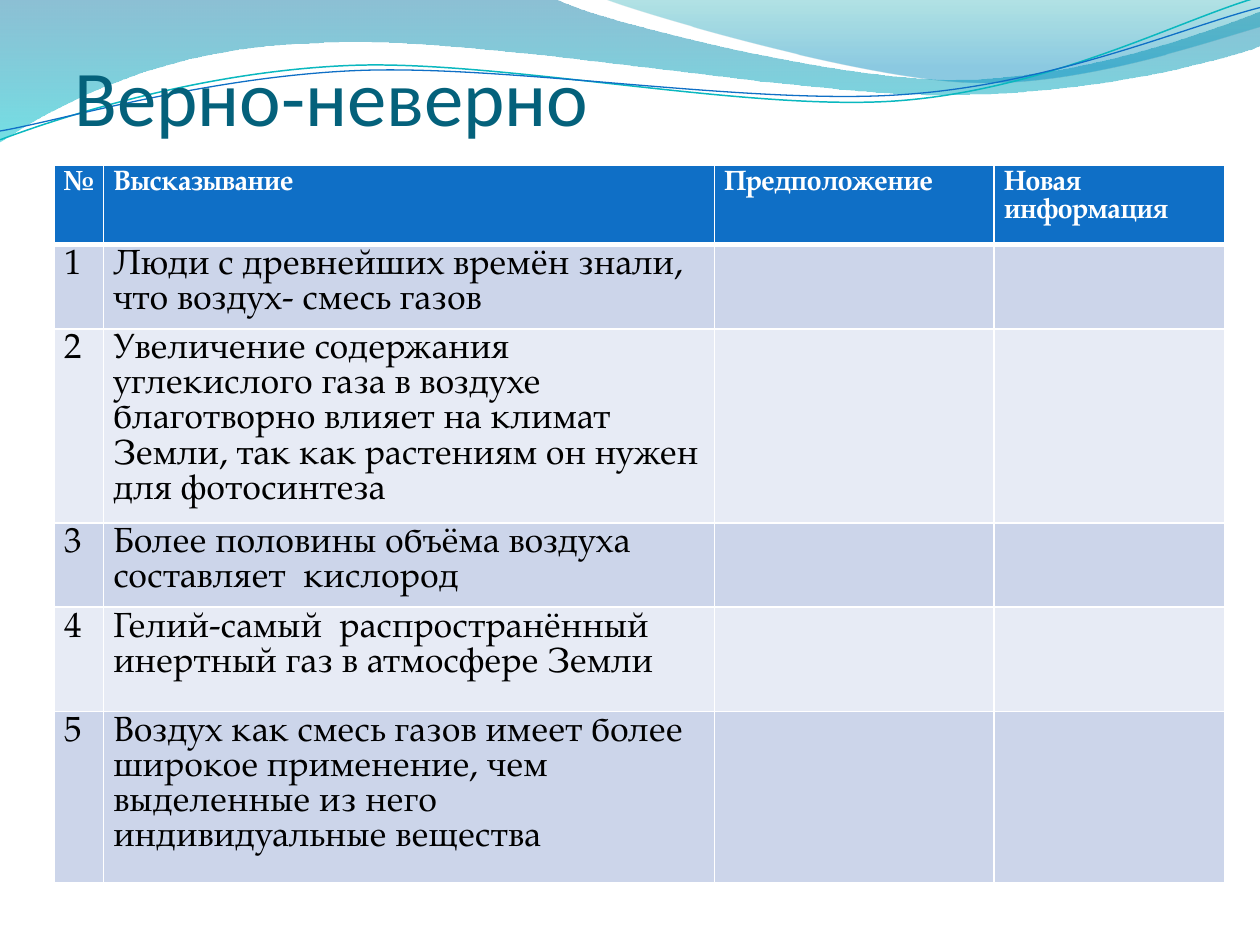
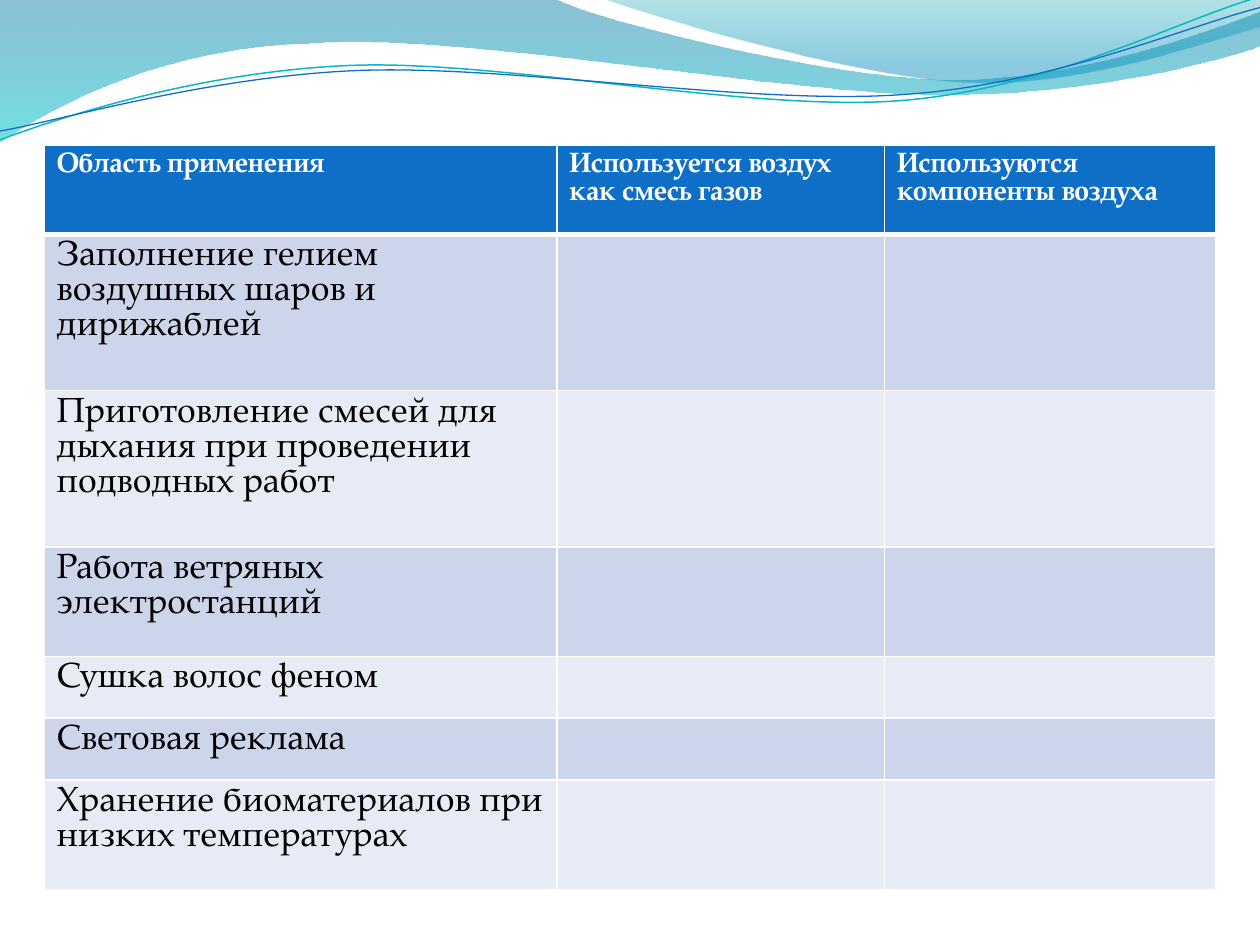
from dataclasses import dataclass
from math import cos, radians, sin

from lxml.etree import SubElement
from pptx import Presentation
from pptx.dml.color import RGBColor
from pptx.enum.text import MSO_ANCHOR, MSO_AUTO_SIZE, PP_ALIGN
from pptx.oxml.ns import qn
from pptx.util import Inches, Pt

# Shared look
TITLE_FONT, TABLE_FONT = "Calibri", "TeX Gyre Pagella"
TITLE_COLOR, HEADER, WHITE, BLACK = "04617B", "0F6FC6", "FFFFFF", "000000"
BANDS = ("CCD5EA", "E7EBF5")
LINE_TILT = -2.7
LINE_CENTER = (4.99, 0.58)

Point = tuple[float, float]


@dataclass(frozen=True)
class Stop:
    position: float
    color: str
    opacity: int


@dataclass(frozen=True)
class Wave:
    start: Point
    segments: list[tuple[float, ...]]  # 2 numbers: line, 6 numbers: Bezier curve
    stops: tuple[Stop, ...] = ()
    line: str = ""
    width: float = 0


@dataclass(frozen=True)
class TableSpec:
    left: float
    top: float
    cols: list[float]
    rows: list[float]
    margins: Point  # horizontal, vertical
    texts: list[list[str]]


WAVES = [
    Wave((0, 0), [
        (4.4, -0.01),
        (4.76, 0.17, 6.64, 0.63, 7.58, 0.63),
        (8.53, 0.63, 9.58, 0.26, 10, 0.09),
        (10.01, 0.36),
        (9.83, 0.44, 8.7, 0.76, 7.46, 0.75),
        (6.22, 0.75, 3.82, 0.28, 2.57, 0.34),
        (1.29, 0.36, 0.46, 0.83, -0.01, 1.13),
        (0, 0),
    ], stops=(Stop(0, "0074A1", 45), Stop(1, "00C6CF", 55))),
    Wave((4.79, -0.01), [
        (5.09, 0.11, 6.82, 0.62, 7.69, 0.65),
        (8.56, 0.69, 9.61, 0.32, 10, 0.21),
        (10, 0),
        (4.79, -0.01),
    ], stops=(Stop(0, "00A1A9", 30), Stop(0.8, "008BBF", 45))),
    Wave((0, 1.11), [
        (0.48, 0.93, 1.58, 0.57, 2.77, 0.52),
        (3.95, 0.47, 5.93, 0.89, 7.13, 0.8),
        (8.33, 0.71, 9.38, 0.15, 9.98, -0.02),
    ], line="0AB8BF", width=0.85),
    Wave((0, 1.04), [
        (0.47, 0.96, 1.64, 0.61, 2.83, 0.56),
        (4.03, 0.51, 5.97, 0.84, 7.17, 0.75),
        (8.36, 0.67, 9.41, 0.21, 10, 0.06),
    ], line="0F6FC6", width=0.75),
]

STATEMENTS = TableSpec(
    0.43, 1.31,
    cols=[0.39, 4.85, 2.22, 1.83],
    rows=[0.63, 0.67, 1.54, 0.67, 0.83, 1.36],
    margins=(0.08, 0.04),
    texts=[
        ["№", "Высказывание", "Предположение", "Новая информация"],
        ["1", "Люди с древнейших времён знали, что воздух- смесь газов"],
        ["2", "Увеличение содержания углекислого газа в воздухе  благотворно "
              "влияет на климат Земли, так как растениям он нужен для фотосинтеза"],
        ["3", "Более половины объёма воздуха составляет  кислород"],
        ["4", "Гелий-самый  распространённый\nинертный газ в атмосфере Земли"],
        ["5", "Воздух как смесь газов имеет более широкое применение, "
              "чем выделенные из него индивидуальные вещества"],
    ])

APPLICATIONS = TableSpec(
    0.35, 1.15,
    cols=[4.07, 2.6, 2.63],
    rows=[0.71, 1.24, 1.24, 0.87, 0.49, 0.49, 0.87],
    margins=(0.1, 0.05),
    texts=[
        ["Область применения", "Используется воздух как смесь газов",
         "Используются компоненты воздуха"],
        ["Заполнение гелием воздушных шаров и дирижаблей"],
        ["Приготовление смесей для дыхания при проведении подводных работ"],
        ["Работа ветряных электростанций"],
        ["Сушка волос феном"],
        ["Световая реклама"],
        ["Хранение биоматериалов при низких температурах"],
    ])


def rgb(color: str) -> RGBColor:
    return RGBColor.from_string(color)


def to_emu(point: Point, tilt: float) -> tuple[int, int]:
    """Undo the tilt, which the shape's own rotation brings back."""
    cx, cy = LINE_CENTER
    dx, dy = point[0] - cx, point[1] - cy
    c, n = cos(radians(-tilt)), sin(radians(-tilt))
    return Inches(cx + dx * c - dy * n), Inches(cy + dx * n + dy * c)


def add_wave(s, wave: Wave):
    tilt = LINE_TILT if wave.line else 0
    segments = [[to_emu(pt, tilt) for pt in zip(seg[::2], seg[1::2])]
                for seg in wave.segments]
    builder = s.shapes.build_freeform(*to_emu(wave.start, tilt))
    builder.add_line_segments([seg[-1] for seg in segments], close=bool(wave.stops))
    sp = builder.convert_to_shape()

    # Turn the segments that have control points into Bezier curves
    for ln, seg in zip(list(sp.element.iter(qn("a:lnTo"))), segments):
        if len(seg) == 3:
            curve = ln.makeelement(qn("a:cubicBezTo"))
            for x, y in seg:
                SubElement(curve, qn("a:pt"), x=str(x - sp.left), y=str(y - sp.top))
            ln.getparent().replace(ln, curve)

    sp.shadow.inherit = False
    sp.rotation = tilt
    if wave.stops:
        sp.line.fill.background()
        sp.fill.gradient()
        sp.fill.gradient_angle = 270
        for gs, stop in zip(sp.fill.gradient_stops, wave.stops):
            gs.position = stop.position
            gs.color.rgb = rgb(stop.color)
        for clr, stop in zip(sp.element.spPr.iter(qn("a:srgbClr")), wave.stops):
            SubElement(clr, qn("a:alpha")).set("val", str(stop.opacity * 1000))
    else:
        sp.fill.background()
        sp.line.color.rgb = rgb(wave.line)
        sp.line.width = Pt(wave.width)
    return sp


def add_waves_to_master(prs, s) -> None:
    """Draw the waves on a slide, then move them behind the master's placeholders."""
    tree = prs.slide_master.shapes._spTree
    for i, wave in enumerate(WAVES):
        element = add_wave(s, wave).element
        element.nvSpPr.cNvPr.set("id", str(100 + i))
        tree.insert(2 + i, element)


def set_title(s, text: str) -> None:
    title = s.shapes.title
    title.left, title.top = Inches(0.59), Inches(0.29)
    title.width, title.height = Inches(9), Inches(0.84)
    tf = title.text_frame
    tf.text = text
    tf.word_wrap = True
    tf.auto_size = MSO_AUTO_SIZE.NONE
    tf.vertical_anchor = MSO_ANCHOR.BOTTOM
    tf.margin_left = tf.margin_right = tf.margin_bottom = 0
    tf.margin_top = Inches(0.05)
    p = tf.paragraphs[0]
    p.alignment = PP_ALIGN.LEFT
    font = p.runs[0].font
    font.name, font.size, font.color.rgb = TITLE_FONT, Pt(45), rgb(TITLE_COLOR)


def set_borders(cell, top: float, bottom: float) -> None:
    tcPr = cell._tc.get_or_add_tcPr()
    for side, width in (("L", 1), ("R", 1), ("T", top), ("B", bottom)):
        ln = SubElement(tcPr, qn(f"a:ln{side}"), w=str(Pt(width)))
        SubElement(SubElement(ln, qn("a:solidFill")), qn("a:srgbClr"), val=WHITE)


def format_cell(cell, row: int, margins: Point) -> None:
    is_header = row == 0
    set_borders(cell, 3 if row == 1 else 1, 3 if is_header else 1)
    cell.fill.solid()
    cell.fill.fore_color.rgb = rgb(HEADER if is_header else BANDS[(row - 1) % 2])
    cell.margin_left = cell.margin_right = Inches(margins[0])
    cell.margin_top = cell.margin_bottom = Inches(margins[1])
    size = Pt(16 if is_header else 20)
    for p in cell.text_frame.paragraphs:
        p.line_spacing = size
        for r in p.runs:
            r.font.name, r.font.size, r.font.bold = TABLE_FONT, size, is_header
            r.font.color.rgb = rgb(WHITE if is_header else BLACK)


def add_data_table(s, spec: TableSpec) -> None:
    frame = s.shapes.add_table(
        len(spec.rows), len(spec.cols), Inches(spec.left), Inches(spec.top),
        Inches(sum(spec.cols)), Inches(sum(spec.rows)))
    table = frame.table
    for col, width in zip(table.columns, spec.cols):
        col.width = Inches(width)
    for i, (row, height) in enumerate(zip(table.rows, spec.rows)):
        row.height = Inches(height)
        for cell, text in zip(row.cells, spec.texts[i]):
            cell.text_frame.text = text
        for cell in row.cells:
            format_cell(cell, i, spec.margins)


def main() -> None:
    prs = Presentation()
    prs.slide_width, prs.slide_height = Inches(10), Inches(7.5)

    # Slide 1: true or false statements
    s = prs.slides.add_slide(prs.slide_layouts[5])
    add_waves_to_master(prs, s)
    set_title(s, "Верно-неверно")
    add_data_table(s, STATEMENTS)

    # Slide 2: uses of air and its components
    s = prs.slides.add_slide(prs.slide_layouts[6])
    add_data_table(s, APPLICATIONS)

    prs.save("out.pptx")


if __name__ == "__main__":
    main()
